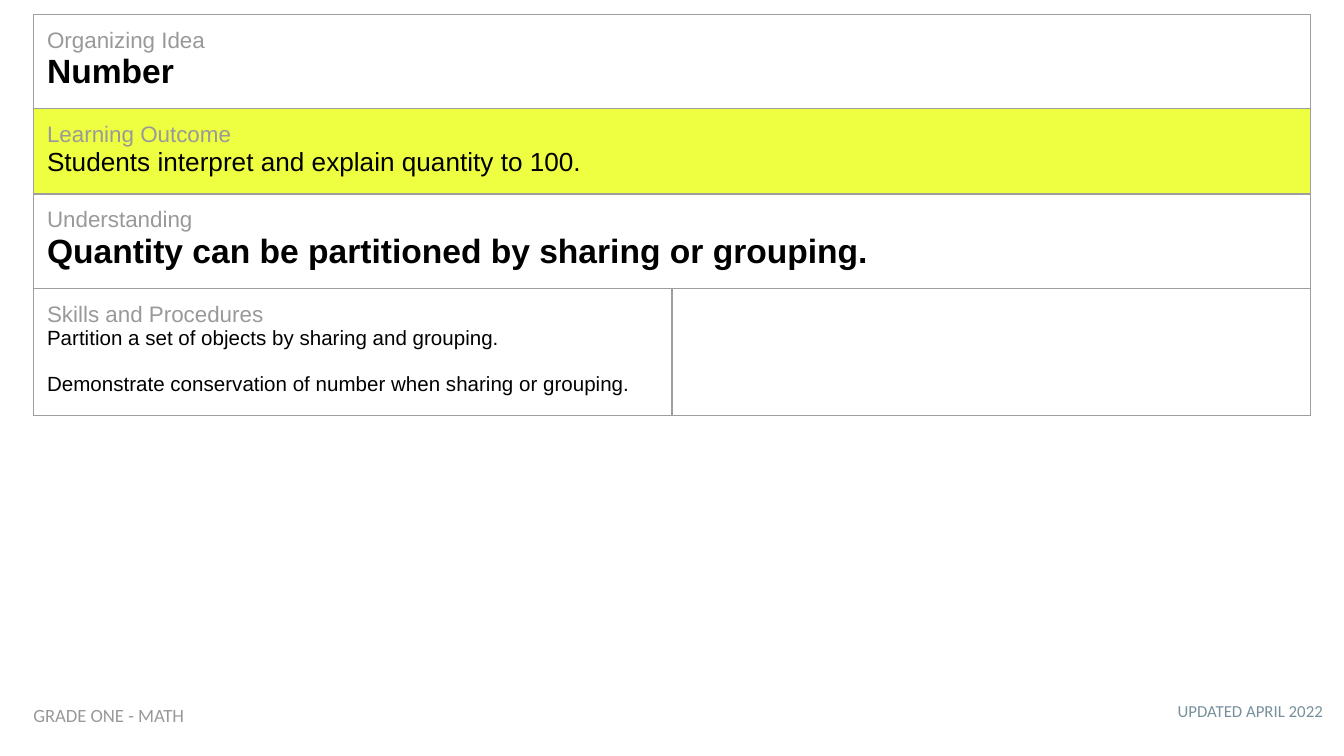
from lxml import etree
from pptx import Presentation
from pptx import util as u
from pptx.dml.color import RGBColor
from pptx.enum import text
from pptx.oxml.ns import qn

WIDTH = 10
HEIGHT = WIDTH * 9 / 16
GRAY, BLACK, LIME, SLATE, RULE = "999999", "000000", "EEFF41", "78909C", "9E9E9E"


def color(value):
    return RGBColor.from_string(value)


class CurriculumSlide:
    """Holds the style and the current slide; lengths are shares of the slide."""

    body_font, footer_font = "Arial", "Calibri"
    inset = u.Inches(0.1)

    def __init__(self, presentation):
        self.width = presentation.slide_width
        self.height = presentation.slide_height
        self.slide = presentation.slides.add_slide(presentation.slide_layouts[6])

    def style(self, run, font, size, hex_color, bold=False):
        run.font.name, run.font.size, run.font.bold = font, u.Pt(size), bold
        run.font.color.rgb = color(hex_color)

    def footer(self, words, left, top, width, height, size, hex_color, align):
        shape = self.slide.shapes.add_textbox(
            int(left * self.width), int(top * self.height),
            int(width * self.width), int(height * self.height))
        frame = shape.text_frame
        frame.word_wrap = True
        frame.margin_left = frame.margin_right = self.inset
        frame.margin_top = frame.margin_bottom = self.inset
        frame.text = words
        frame.paragraphs[0].alignment = align
        self.style(frame.paragraphs[0].runs[0], self.footer_font, size, hex_color)

    def table(self, left, top, width, row_heights):
        shape = self.slide.shapes.add_table(
            len(row_heights), 2, int(left * self.width), int(top * self.height),
            int(width * self.width), int(sum(row_heights) * self.height))
        table = shape.table
        table.first_row = table.horz_banding = False
        for row, share in zip(table.rows, row_heights):
            row.height = int(share * self.height)
        for cell in table.iter_cells():
            cell.margin_left = cell.margin_right = self.inset
            cell.margin_top = cell.margin_bottom = self.inset
            self.borders(cell)
            cell.fill.background()
        return table

    def borders(self, cell):
        properties = cell._tc.get_or_add_tcPr()
        for side in ("a:lnL", "a:lnR", "a:lnT", "a:lnB"):
            line = etree.SubElement(properties, qn(side), w=str(u.Pt(0.75)))
            fill = etree.SubElement(line, qn("a:solidFill"))
            etree.SubElement(fill, qn("a:srgbClr"), val=RULE)

    def entry(self, cell, words, size, bold=False, gap=0):
        """Write paragraphs whose first run is a gray label; gap precedes the third."""
        frame = cell.text_frame
        frame.text = words
        for paragraph in frame.paragraphs[2:]:
            paragraph.space_before = u.Pt(gap)
        label, *lines = [run for paragraph in frame.paragraphs for run in paragraph.runs]
        self.style(label, self.body_font, 12, GRAY)
        for line in lines:
            self.style(line, self.body_font, size, BLACK, bold)


def main():
    presentation = Presentation()
    presentation.slide_width = u.Inches(WIDTH)
    presentation.slide_height = u.Inches(HEIGHT)
    page = CurriculumSlide(presentation)

    # Date at the lower right
    page.footer("UPDATED APRIL 2022", 7.24 / WIDTH, 5.14 / HEIGHT, 2.7 / WIDTH,
                0.35 / HEIGHT, 9, SLATE, text.PP_ALIGN.RIGHT)

    # Curriculum table: three full-width rows, then a split one
    heights = [inches / HEIGHT for inches in (0.7, 0.63, 0.7, 0.95)]
    table = page.table(0.25 / WIDTH, 0.11 / HEIGHT, 9.5 / WIDTH, heights)
    for row in range(3):
        table.cell(row, 0).merge(table.cell(row, 1))

    # "\v" breaks a line, "\n" starts a paragraph
    entries = [
        ("Organizing Idea\vNumber", 18, True),
        ("Learning Outcome\vStudents interpret and explain quantity to 100.", 14),
        ("Understanding\nQuantity can be partitioned by sharing or grouping.", 18, True),
        ("Skills and Procedures\nPartition a set of objects by sharing and grouping.\n"
         "Demonstrate conservation of number when sharing or grouping.", 11, False, 12.5),
    ]
    for row, entry in enumerate(entries):
        page.entry(table.cell(row, 0), *entry)

    # Highlight the learning outcome
    outcome = table.cell(1, 0)
    outcome.fill.solid()
    outcome.fill.fore_color.rgb = color(LIME)

    # Grade and subject at the lower left
    page.footer("GRADE ONE - MATH", 0.15 / WIDTH, 5.15 / HEIGHT, 3.01 / WIDTH,
                0.37 / HEIGHT, 10, GRAY, text.PP_ALIGN.LEFT)

    presentation.save("out.pptx")


if __name__ == "__main__":
    main()
